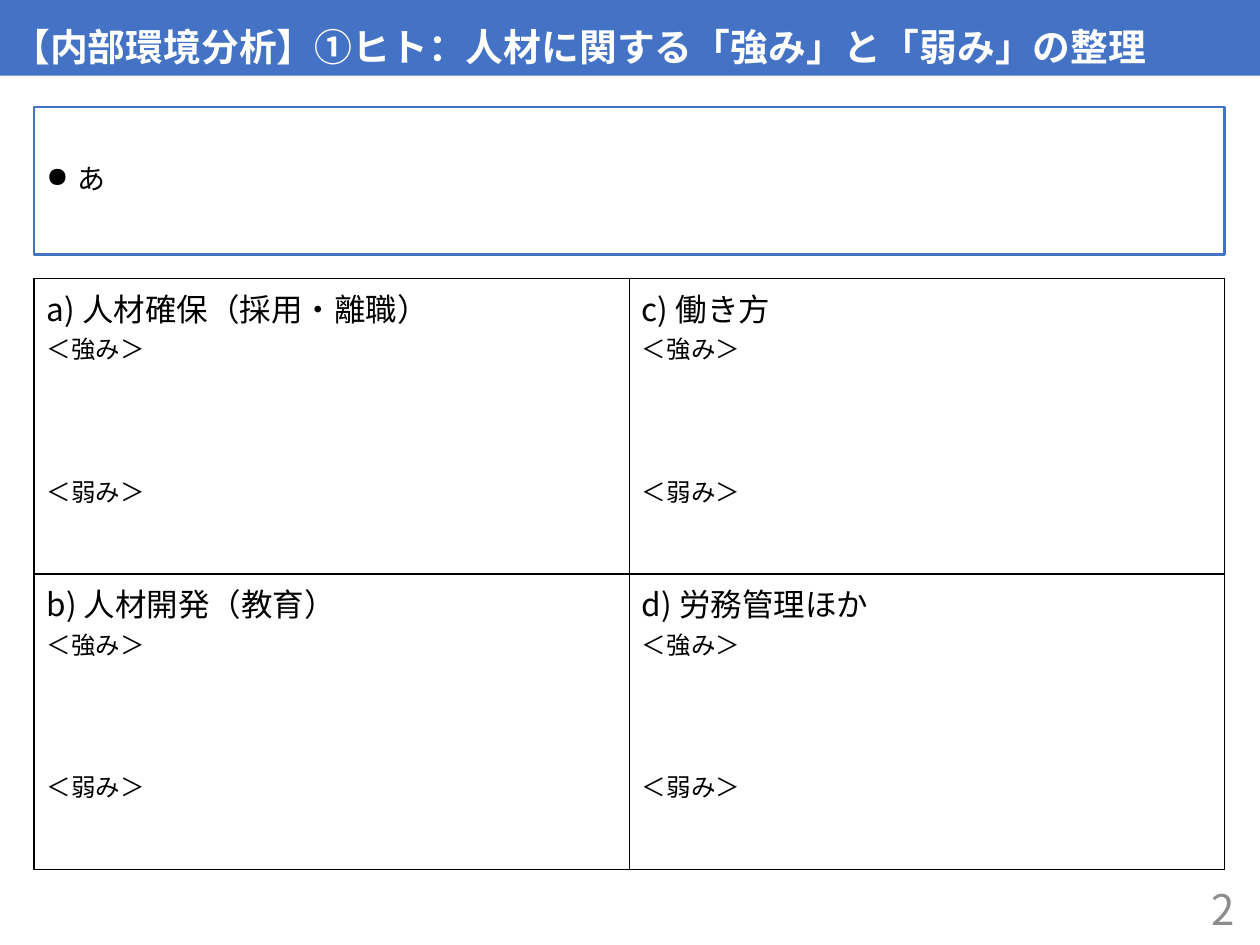
from lxml.etree import SubElement
from pptx import Presentation
from pptx.dml.color import RGBColor
from pptx.enum.shapes import MSO_SHAPE
from pptx.enum.text import MSO_ANCHOR, PP_ALIGN
from pptx.oxml.ns import qn
from pptx.util import Inches, Pt

FONT = "Noto Sans CJK JP"
COLORS = {"blue": "4472C4", "white": "FFFFFF", "black": "000000", "gray": "8C8C8C"}


def add_run(p, text, size, color="black", bold=False):
    r = p.add_run()
    r.text = text
    r.font.size = Pt(size)
    r.font.bold = bold
    r.font.name = FONT
    r.font.color.rgb = RGBColor.from_string(COLORS[color])
    SubElement(r.font._element, qn("a:ea"), typeface=FONT)


def add_box(left, top, width, height, fill):
    sp = s.shapes.add_shape(MSO_SHAPE.RECTANGLE, Inches(left), Inches(top),
                            Inches(width), Inches(height))
    sp.shadow.inherit = False
    sp.fill.solid()
    sp.fill.fore_color.rgb = RGBColor.from_string(COLORS[fill])
    sp.line.fill.background()
    tf = sp.text_frame
    tf.word_wrap = True
    p = tf.paragraphs[0]
    p.alignment = PP_ALIGN.LEFT
    p.line_spacing = 0.9
    return sp, tf, p


prs = Presentation()
prs.slide_width = Inches(10)
prs.slide_height = Inches(7.5)
s = prs.slides.add_slide(prs.slide_layouts[6])

title, tf, p = add_box(0, 0, 10, 0.6, "blue")
tf.vertical_anchor = MSO_ANCHOR.BOTTOM
add_run(p, "【内部環境分析】①ヒト：人材に関する「強み」と「弱み」の整理", 21.6, "white", True)

number = s.shapes.add_textbox(Inches(7.65), Inches(7.01), Inches(2.25), Inches(0.4))
tf = number.text_frame
tf.word_wrap = True
tf.vertical_anchor = MSO_ANCHOR.MIDDLE
p = tf.paragraphs[0]
p.alignment = PP_ALIGN.RIGHT
add_run(p, "2", 24, "gray")

summary, tf, p = add_box(0.27, 0.85, 9.45, 1.17, "white")
summary.line.color.rgb = RGBColor.from_string(COLORS["blue"])
summary.line.width = Pt(1.5)
tf.vertical_anchor = MSO_ANCHOR.MIDDLE
p.space_before = Pt(10)
pPr = p._p.get_or_add_pPr()
pPr.set("marL", str(Inches(0.25)))
pPr.set("indent", str(-Inches(0.25)))
SubElement(pPr, qn("a:buChar"), char="●")
add_run(p, "あ", 16)

topics = [["a) 人材確保（採用・離職）", "c) 働き方"],
          ["b) 人材開発（教育）", "d) 労務管理ほか"]]
table = s.shapes.add_table(2, 2, Inches(0.27), Inches(2.21),
                           Inches(9.45), Inches(4.69)).table
table.first_row = False
table.horz_banding = False
for i, row in enumerate(topics):
    for j, topic in enumerate(row):
        cell = table.cell(i, j)
        tf = cell.text_frame
        add_run(tf.paragraphs[0], topic, 18)
        for label, gap in [("＜強み＞", 0), ("＜弱み＞", 61)]:
            p = tf.add_paragraph()
            p.space_before = Pt(gap)
            add_run(p, label, 14)
        tcPr = cell._tc.get_or_add_tcPr()
        for side in ("lnL", "lnR", "lnT", "lnB"):
            ln = SubElement(tcPr, qn(f"a:{side}"), w=str(Pt(1)))
            SubElement(SubElement(ln, qn("a:solidFill")), qn("a:srgbClr"), val=COLORS["black"])
        cell.fill.background()

prs.save("out.pptx")
